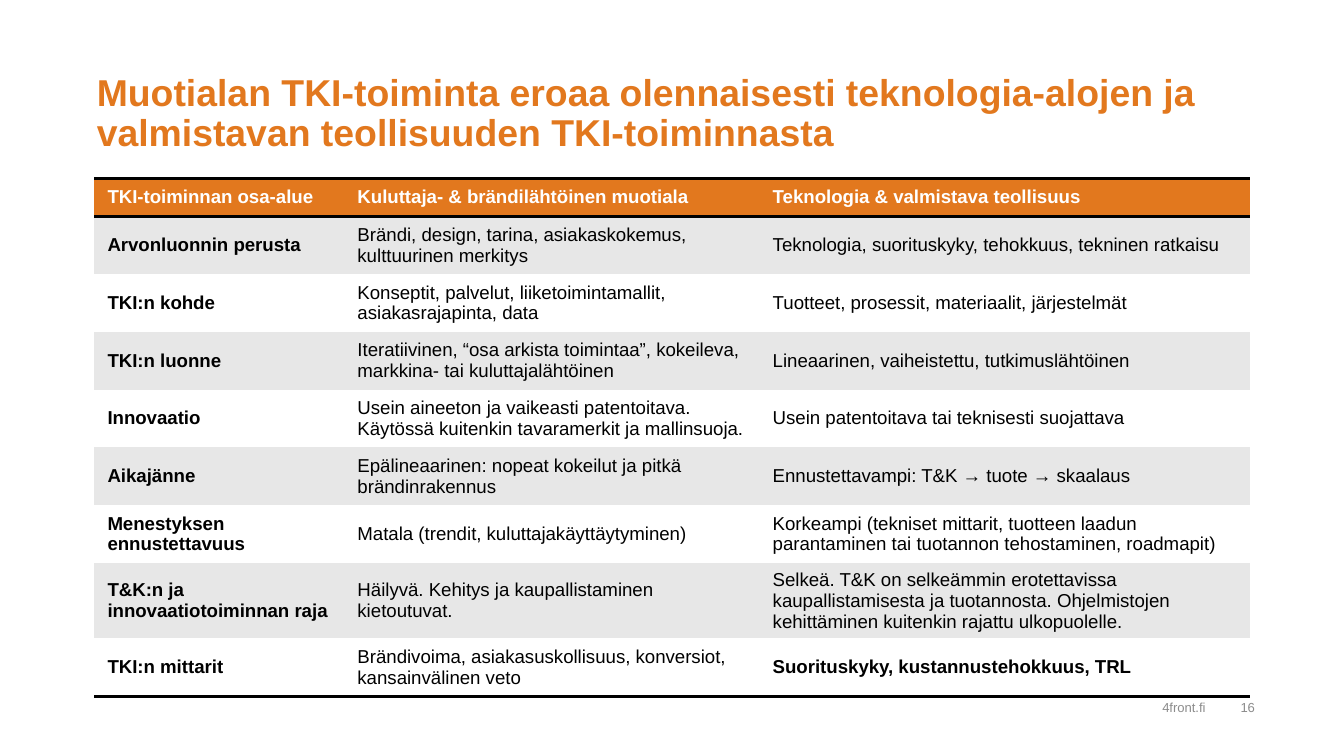
from lxml import etree
from pptx import Presentation
from pptx.dml.color import RGBColor
from pptx.enum.text import MSO_ANCHOR, PP_ALIGN
from pptx.oxml.ns import qn
from pptx.util import Inches, Pt

LEFT, RIGHT = PP_ALIGN.LEFT, PP_ALIGN.RIGHT
TOP, MIDDLE = MSO_ANCHOR.TOP, MSO_ANCHOR.MIDDLE
ORANGE = RGBColor(0xE2, 0x78, 0x1E)
GREY = RGBColor(0x8C, 0x8C, 0x8C)
BAND = RGBColor(0xE7, 0xE7, 0xE7)
WHITE = RGBColor(0xFF, 0xFF, 0xFF)
BLACK = RGBColor(0, 0, 0)
PLAIN = "{2D5ABB26-0587-4C30-8999-92F81FD0307C}"

TITLE = ("Muotialan TKI-toiminta eroaa olennaisesti teknologia-alojen ja "
         "valmistavan teollisuuden TKI-toiminnasta")
ROWS = [
    ("TKI-toiminnan osa-alue",
     "Kuluttaja- & brändilähtöinen muotiala",
     "Teknologia & valmistava teollisuus"),
    ("Arvonluonnin perusta",
     "Brändi, design, tarina, asiakaskokemus, kulttuurinen merkitys",
     "Teknologia, suorituskyky, tehokkuus, tekninen ratkaisu"),
    ("TKI:n kohde",
     "Konseptit, palvelut, liiketoimintamallit, asiakasrajapinta, data",
     "Tuotteet, prosessit, materiaalit, järjestelmät"),
    ("TKI:n luonne",
     "Iteratiivinen, “osa arkista toimintaa”, kokeileva, "
     "markkina- tai kuluttajalähtöinen",
     "Lineaarinen, vaiheistettu, tutkimuslähtöinen"),
    ("Innovaatio",
     "Usein aineeton ja vaikeasti patentoitava. "
     "Käytössä kuitenkin tavaramerkit ja mallinsuoja.",
     "Usein patentoitava tai teknisesti suojattava"),
    ("Aikajänne",
     "Epälineaarinen: nopeat kokeilut ja pitkä brändinrakennus",
     "Ennustettavampi: T&K → tuote → skaalaus"),
    ("Menestyksen ennustettavuus",
     "Matala (trendit, kuluttajakäyttäytyminen)",
     "Korkeampi (tekniset mittarit, tuotteen laadun parantaminen "
     "tai tuotannon tehostaminen, roadmapit)"),
    ("T&K:n ja innovaatiotoiminnan raja",
     "Häilyvä. Kehitys ja kaupallistaminen kietoutuvat.",
     "Selkeä. T&K on selkeämmin erotettavissa kaupallistamisesta ja "
     "tuotannosta. Ohjelmistojen kehittäminen kuitenkin rajattu "
     "ulkopuolelle."),
    ("TKI:n mittarit",
     "Brändivoima, asiakasuskollisuus, konversiot, kansainvälinen veto",
     "Suorituskyky, kustannustehokkuus, TRL"),
]
LAST = len(ROWS) - 1
WIDTHS = (1.86, 3.09, 3.65)
HEIGHTS = [0.28] + [0.43] * LAST


class Deck:
    font = "Arial"

    def __init__(self, wide, high):
        self.show = Presentation()
        self.show.slide_width = wide
        self.show.slide_height = high
        self.slide = self.show.slides.add_slide(self.show.slide_layouts[6])

    def style(self, frame, size, color, bold=False):
        for run in frame.paragraphs[0].runs:
            run.font.name = self.font
            run.font.size = Pt(size)
            run.font.bold = bold
            run.font.color.rgb = color

    def text(self, text, box, size, color, bold=False, align=LEFT,
             anchor=MIDDLE, lead=1.0):
        frame = self.slide.shapes.add_textbox(*map(Inches, box)).text_frame
        frame.word_wrap = True
        frame.margin_left = frame.margin_right = 0
        frame.margin_top = frame.margin_bottom = 0
        frame.vertical_anchor = anchor
        frame.text = text
        frame.paragraphs[0].alignment = align
        frame.paragraphs[0].line_spacing = lead
        self.style(frame, size, color, bold)

    def border(self, cell, sides):
        props = cell._tc.get_or_add_tcPr()
        for spot, side in enumerate(sides):
            line = etree.Element(qn("a:ln" + side), w=str(Pt(2)))
            fill = etree.SubElement(line, qn("a:solidFill"))
            etree.SubElement(fill, qn("a:srgbClr"), val=str(BLACK))
            props.insert(spot, line)

    def cell(self, cell, text, fill, color, bold, sides):
        cell.fill.solid()
        cell.fill.fore_color.rgb = fill
        cell.vertical_anchor = MIDDLE
        cell.margin_top = cell.margin_bottom = Inches(0.03)
        cell.text_frame.text = text
        self.style(cell.text_frame, 10, color, bold)
        self.border(cell, sides)

    def table(self, rows, left, top, widths, heights):
        size = (left, top, sum(widths), sum(heights))
        table = self.slide.shapes.add_table(
            len(rows), len(widths), *map(Inches, size)).table
        table._tbl.tblPr.find(qn("a:tableStyleId")).text = PLAIN
        for col, width in zip(table.columns, widths):
            col.width = Inches(width)
        for r, (row, high) in enumerate(zip(rows, heights)):
            table.rows[r].height = Inches(high)
            head = r == 0
            fill = ORANGE if head else BAND if r % 2 else WHITE
            sides = "TB" if head else "B" if r == LAST else ""
            for c, text in enumerate(row):
                bold = head or c == 0 or (r, c) == (LAST, 2)
                self.cell(table.cell(r, c), text, fill,
                          WHITE if head else BLACK, bold, sides)

    def save(self):
        self.show.save("out.pptx")


def main():
    wide = Inches(10)
    deck = Deck(wide, wide * 9 // 16)
    deck.text(TITLE, (0.72, 0.55, 8.59, 0.83), 20, ORANGE, bold=True,
              anchor=TOP, lead=0.9)
    deck.text("4front.fi", (5.59, 5.18, 3.38, 0.17), 7, GREY, align=RIGHT)
    deck.text("16", (9.23, 5.18, 0.55, 0.17), 7, GREY)
    deck.table(ROWS, 0.7, 1.33, WIDTHS, HEIGHTS)
    deck.save()


if __name__ == "__main__":
    main()
